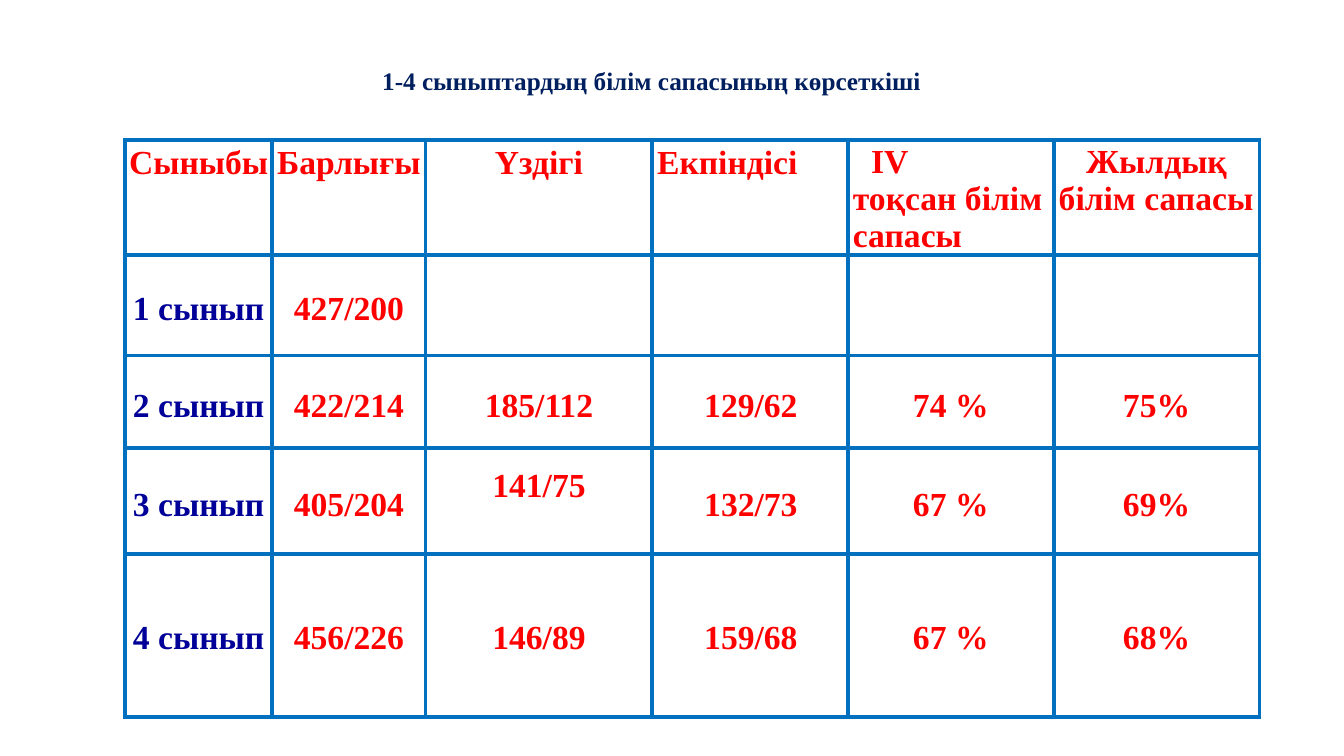
from dataclasses import dataclass

from lxml.etree import SubElement
from pptx import Presentation
from pptx.dml.color import RGBColor
from pptx.enum.text import MSO_ANCHOR, PP_ALIGN
from pptx.oxml.ns import qn
from pptx.util import Pt


@dataclass(frozen=True)
class Theme:
    font: str = "Times New Roman"
    title_size: int = 18
    table_size: int = 24
    title: str = "001F5F"
    grade: str = "000099"
    value: str = "FF0000"
    border: str = "0070BF"
    border_width: int = 3


THEME = Theme()

TITLE = "1-4 сыныптардың білім сапасының көрсеткіші"
ROWS = [
    ["Сыныбы", "Барлығы", "Үздігі", "Екпіндісі",
     "IV\vтоқсан білім сапасы", "Жылдық білім сапасы"],
    ["1 сынып", "427/200", "", "", "", ""],
    ["2 сынып", "422/214", "185/112", "129/62", "74 %", "75%"],
    ["3 сынып", "405/204", "141/75", "132/73", "67 %", "69%"],
    ["4 сынып", "456/226", "146/89", "159/68", "67 %", "68%"],
]

# Lengths in points
COLUMN_WIDTHS = [105.2, 109.5, 162, 139.7, 147, 147]
ROW_HEIGHTS = [60.5, 72, 66.2, 75.6, 116.6]
TOP_MARGINS = [2.9, 26, 23, 27.6, 46.8]
RAISED_CELL = (3, 2)
RAISED_MARGIN = 13.7
RIGHT_COLUMN = 3
RIGHT_MARGIN = 36
WRAPPED_HEADINGS = {4: 13, 5: 19.5}  # column: first-line indent
WRAPPED_LEFT, WRAPPED_TOP = 3.6, 2.2


def set_values(target, values):
    for name, value in values.items():
        setattr(target, name, value)


def write_text(paragraph, text, size, color, alignment):
    paragraph.text = text
    paragraph.alignment = alignment
    for run in paragraph.runs:
        set_values(run.font, {"name": THEME.font, "size": Pt(size), "bold": True})
        run.font.color.rgb = RGBColor.from_string(color)


def add_borders(cell):
    properties = cell._tc.get_or_add_tcPr()
    for position, side in enumerate(("lnL", "lnR", "lnT", "lnB")):
        line = SubElement(properties, qn(f"a:{side}"), w=str(Pt(THEME.border_width)))
        fill = SubElement(line, qn("a:solidFill"))
        SubElement(fill, qn("a:srgbClr"), val=THEME.border)
        properties.insert(position, line)


def format_cell(cell, row, column, text):
    wrapped = row == 0 and column in WRAPPED_HEADINGS
    top = RAISED_MARGIN if (row, column) == RAISED_CELL else TOP_MARGINS[row]
    alignment = PP_ALIGN.RIGHT if column == RIGHT_COLUMN else PP_ALIGN.CENTER
    if wrapped:
        top, alignment = WRAPPED_TOP, PP_ALIGN.LEFT
    set_values(cell, {
        "margin_left": Pt(WRAPPED_LEFT if wrapped else 0),
        "margin_right": Pt(RIGHT_MARGIN if column == RIGHT_COLUMN else 0),
        "margin_top": Pt(top),
        "margin_bottom": Pt(0),
        "vertical_anchor": MSO_ANCHOR.TOP,
    })
    cell.fill.background()
    add_borders(cell)

    paragraph = cell.text_frame.paragraphs[0]
    color = THEME.grade if row and column == 0 else THEME.value
    write_text(paragraph, text, THEME.table_size, color, alignment)
    if wrapped:
        indent = Pt(WRAPPED_HEADINGS[column])
        paragraph._p.get_or_add_pPr().set("indent", str(indent))


def add_title(slide):
    title = slide.shapes.title
    set_values(title, {"left": Pt(273), "top": Pt(45.4),
                       "width": Pt(387), "height": Pt(24)})
    set_values(title.text_frame, {
        "margin_left": Pt(0), "margin_right": Pt(0),
        "margin_top": Pt(1), "margin_bottom": Pt(0),
        "word_wrap": True, "vertical_anchor": MSO_ANCHOR.TOP,
    })
    write_text(title.text_frame.paragraphs[0], TITLE, THEME.title_size,
               THEME.title, PP_ALIGN.LEFT)


def add_results_table(slide):
    table = slide.shapes.add_table(
        len(ROWS), len(COLUMN_WIDTHS), Pt(89.3), Pt(100.1),
        Pt(sum(COLUMN_WIDTHS)), Pt(sum(ROW_HEIGHTS))).table
    set_values(table, {"first_row": False, "horz_banding": False})
    for column, width in zip(table.columns, COLUMN_WIDTHS):
        column.width = Pt(width)
    for row, height in zip(table.rows, ROW_HEIGHTS):
        row.height = Pt(height)
    for row, texts in enumerate(ROWS):
        for column, text in enumerate(texts):
            format_cell(table.cell(row, column), row, column, text)


def main():
    presentation = Presentation()
    set_values(presentation, {"slide_width": Pt(960), "slide_height": Pt(540)})
    title_only = presentation.slide_layouts[5]
    slide = presentation.slides.add_slide(title_only)
    add_title(slide)
    add_results_table(slide)
    presentation.save("out.pptx")


if __name__ == "__main__":
    main()
